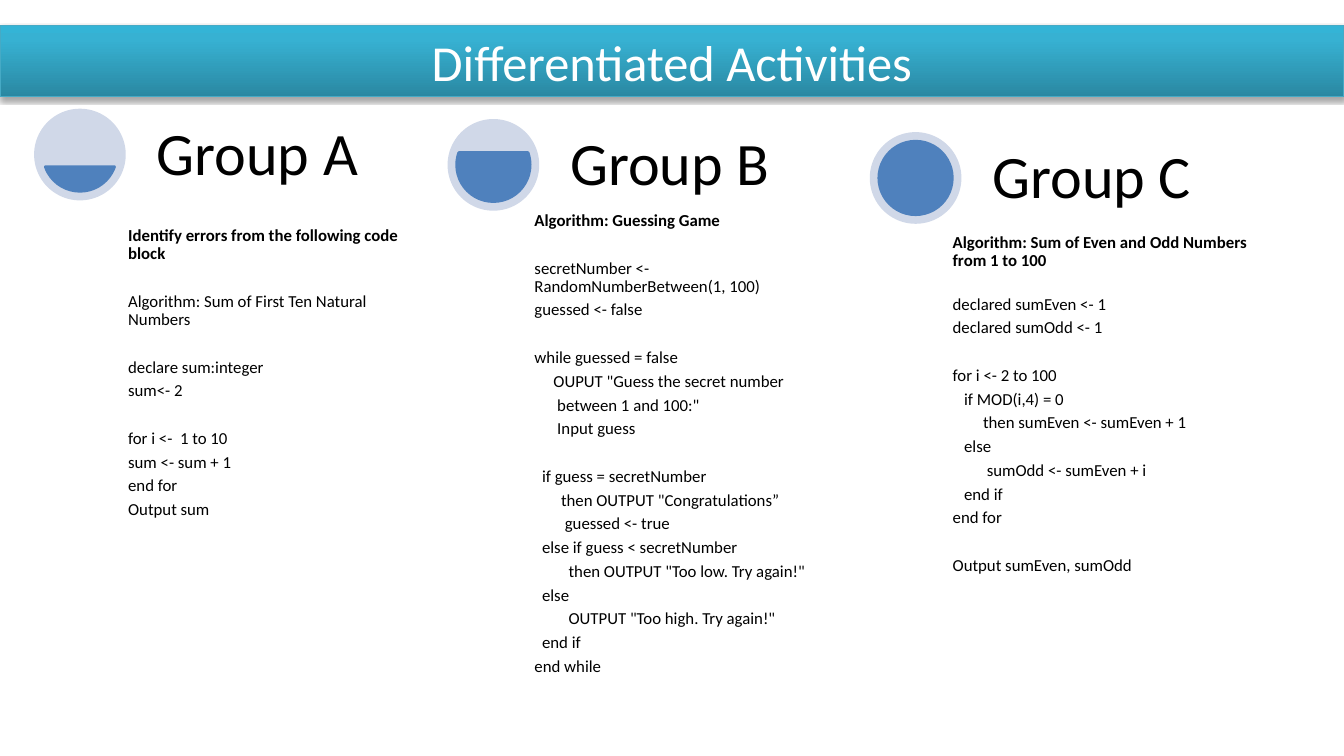
"""Build the Differentiated Activities slide with three programming groups."""
from collections import namedtuple
from copy import deepcopy

from lxml.etree import SubElement
from pptx import Presentation
from pptx.dml.color import RGBColor
from pptx.enum.shapes import MSO_SHAPE as Preset
from pptx.enum.text import MSO_ANCHOR as Anchor, MSO_AUTO_SIZE as AutoSize, PP_ALIGN as Align
from pptx.oxml.ns import qn
from pptx.util import Cm, Pt

FONT = "Calibri"
BLUE, PALE_BLUE = "4F81BD", "D0D8E8"
CIRCLE_SIZE, CHORD_INSET = 2.31, 0.23
HEADING_OFFSET, HEADING_WIDTH = 2.79, 6.83
SPACE_WIDTH = 2.71
STANZA_GAP = 17.1

Group = namedtuple("Group", "name icon chord body heading_gap task stanzas")

GROUPS = [
    Group("Group A", (0.86, 2.74), (11.68, 96.32), (3.15, 5.64, 7.44, 13.18), STANZA_GAP,
          "Identify errors from the following code block", [
              [(0, "Algorithm: Sum of First Ten Natural Numbers")],
              [(0, "declare sum:integer"), (0, "sum<- 2")],
              [(0, "for i <-  1 to 10"), (0, "sum <- sum + 1"), (0, "end for"),
               (0, "Output sum")],
          ]),
    Group("Group B", (11.28, 3.0), (204.32, 119.68), (13.39, 5.26, 7.9, 12.88), STANZA_GAP,
          "Algorithm: Guessing Game", [
              [(0, "secretNumber <- RandomNumberBetween(1, 100)"),
               (0, "guessed <- false")],
              [(0, "while guessed = false"),
               (5, 'OUPUT "Guess the secret number'),
               (6, 'between 1 and 100:"'),
               (6, "Input guess")],
              [(2, "if guess = secretNumber"),
               (7, 'then OUTPUT "Congratulations”'),
               (8, "guessed <- true"),
               (2, "else if guess < secretNumber"),
               (9, 'then OUTPUT "Too low. Try again!"'),
               (2, "else"),
               (9, 'OUTPUT "Too high. Try again!"'),
               (2, "end if"),
               (0, "end while")],
          ]),
    Group("Group C", (21.92, 3.33), (162, 162), (23.93, 5.82, 8.08, 11.48), 14,
          "Algorithm: Sum of Even and Odd Numbers from 1 to 100", [
              [(0, "declared sumEven <- 1"), (0, "declared sumOdd <- 1")],
              [(0, "for i <- 2 to 100"),
               (3, "if MOD(i,4) = 0"),
               (8, "then sumEven <- sumEven + 1"),
               (3, "else"),
               (9, "sumOdd <- sumEven + i"),
               (3, "end if"),
               (0, "end for")],
              [(0, "Output sumEven, sumOdd")],
          ]),
]


def color(value):
    """Return the colour for a hex string."""
    return RGBColor.from_string(value)


def set_values(target, values):
    """Set each named attribute of the target."""
    for name, value in values.items():
        setattr(target, name, value)


def set_place(shape, left, top, width, height):
    """Move and size a shape, in centimetres."""
    set_values(shape, {"left": Cm(left), "top": Cm(top),
                       "width": Cm(width), "height": Cm(height)})


def write(paragraph, text, size, ink="000000", bold=False, **layout):
    """Write one formatted run into a paragraph."""
    run = paragraph.add_run()
    run.text = text
    set_values(run.font, {"name": FONT, "size": Pt(size), "bold": bold})
    run.font.color.rgb = color(ink)
    set_values(paragraph, layout)


def add_disc(slide, preset, left, top, size, fill):
    """Add a flat round shape."""
    shape = slide.shapes.add_shape(preset, Cm(left), Cm(top), Cm(size), Cm(size))
    shape.shadow.inherit = False
    shape.fill.solid()
    shape.fill.fore_color.rgb = color(fill)
    shape.line.fill.background()
    return shape


def add_icon(slide, left, top, angles):
    """Add a pale circle filled up to a level by a chord."""
    add_disc(slide, Preset.OVAL, left, top, CIRCLE_SIZE, PALE_BLUE)
    chord = add_disc(slide, Preset.CHORD, left + CHORD_INSET, top + CHORD_INSET,
                     CIRCLE_SIZE - 2 * CHORD_INSET, BLUE)
    for index, angle in enumerate(angles):
        chord.adjustments[index] = angle
    chord.line.color.rgb = color(BLUE)
    chord.line.width = Pt(2)


def add_text_box(slide, place, margin, anchor):
    """Add a wrapping text box and return its frame."""
    frame = slide.shapes.add_textbox(*map(Cm, place)).text_frame
    set_values(frame, {"word_wrap": True, "vertical_anchor": anchor})
    sides = ("left", "top", "right", "bottom")
    set_values(frame, {f"margin_{side}": Cm(margin) for side in sides})
    return frame


def add_code(slide, group):
    """Add the bold task and the indented code stanzas of a group."""
    frame = add_text_box(slide, group.body, 0.08, Anchor.TOP)
    layout = {"line_spacing": 0.9, "space_after": Pt(4)}
    write(frame.paragraphs[0], group.task, 12, bold=True, **layout)
    gap = group.heading_gap
    for stanza in group.stanzas:
        for spaces, text in stanza:
            paragraph = frame.add_paragraph()
            write(paragraph, text, 12, space_before=Pt(gap), **layout)
            properties = paragraph._p.get_or_add_pPr()
            properties.set("marL", str(Pt(spaces * SPACE_WIDTH)))
            properties.set("indent", "0")
            gap = 0
        gap = STANZA_GAP


def add_group(slide, group):
    """Add the icon, heading and code of one group."""
    left, top = group.icon
    add_icon(slide, left, top, group.chord)
    place = (left + HEADING_OFFSET, top, HEADING_WIDTH, CIRCLE_SIZE)
    heading = add_text_box(slide, place, 0.3, Anchor.BOTTOM)
    write(heading.paragraphs[0], group.name, 43, line_spacing=0.9)
    add_code(slide, group)


def fill_gradient(shape, stops):
    """Fill a shape with an upward gradient."""
    shape.fill.gradient()
    shape.fill.gradient_angle = 90
    stop_list = shape._element.spPr.find(".//" + qn("a:gsLst"))
    while len(stop_list) < len(stops):
        stop_list.append(deepcopy(stop_list[0]))
    for stop, (position, value) in zip(shape.fill.gradient_stops, stops):
        stop.position = position
        stop.color.rgb = color(value)


def add_shadow(shape):
    """Give a shape a soft black shadow below it."""
    effects = SubElement(shape._element.spPr, qn("a:effectLst"))
    shadow = SubElement(effects, qn("a:outerShdw"), blurRad=str(Pt(3.1)),
                        dist=str(Pt(1.8)), dir="5400000", rotWithShape="0")
    black = SubElement(shadow, qn("a:srgbClr"), val="000000")
    SubElement(black, qn("a:alpha"), val="35000")


def format_title(title, text):
    """Turn the title placeholder into a full-width banner."""
    set_place(title, 0, 0.64, 33.87, 1.8)
    fill_gradient(title, [(0, "2A88A2"), (0.8, "37B1D2"), (1, "34B4D6")])
    title.line.color.rgb = color("46AAC5")
    title.line.width = Pt(0.75)
    add_shadow(title)
    set_values(title.text_frame, {"auto_size": AutoSize.NONE, "word_wrap": True,
                                  "vertical_anchor": Anchor.MIDDLE})
    write(title.text_frame.paragraphs[0], text, 36, "FFFFFF", alignment=Align.CENTER)


def main():
    """Build and save the slide."""
    presentation = Presentation()
    set_values(presentation, {"slide_width": Cm(33.87), "slide_height": Cm(19.05)})
    slide = presentation.slides.add_slide(presentation.slide_layouts[5])
    format_title(slide.shapes.title, "Differentiated Activities")
    for group in GROUPS:
        add_group(slide, group)
    presentation.save("out.pptx")


if __name__ == "__main__":
    main()
